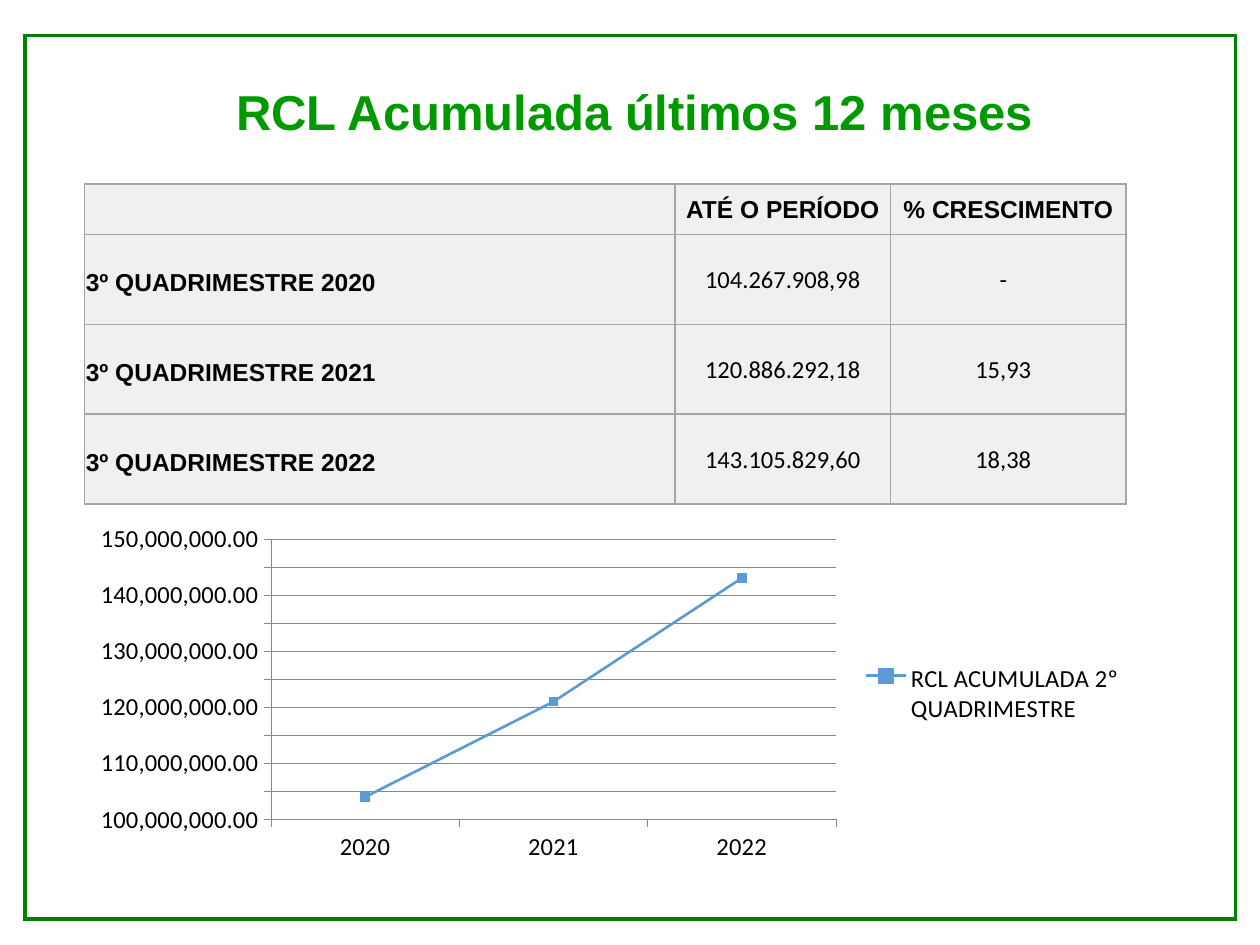
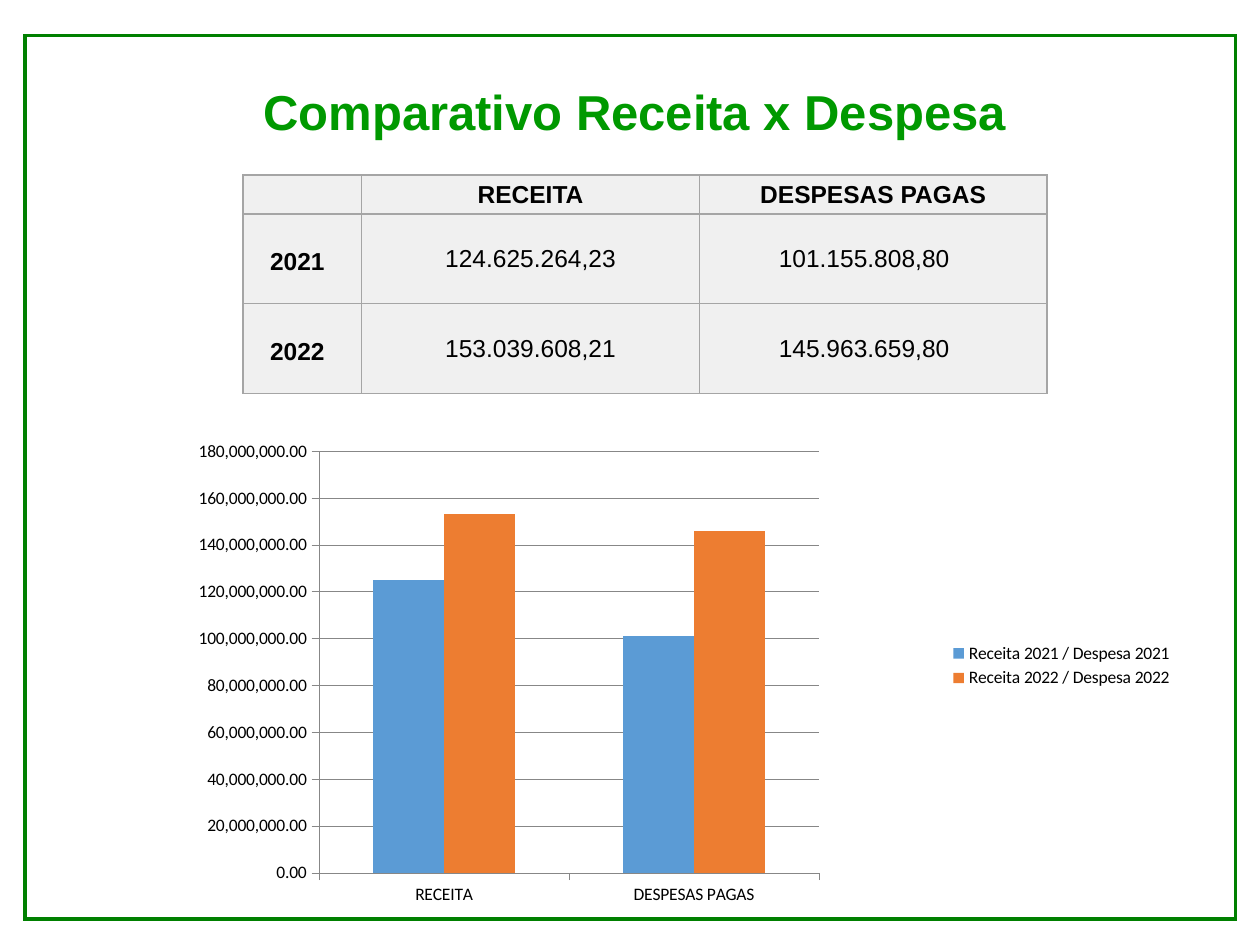
"""Build two slides on accumulated revenue and on revenue against expenses."""
from lxml import etree
from pptx import Presentation
from pptx.chart.data import CategoryChartData
from pptx.dml.color import RGBColor
from pptx.enum import chart as charts, shapes, text
from pptx.oxml import ns
from pptx.util import Cm, Pt

FRAME_GREEN = RGBColor(0x00, 0x80, 0x00)
TITLE_GREEN = RGBColor(0x00, 0x99, 0x00)
CELL_GREY = RGBColor(0xF0, 0xF0, 0xF0)
BORDER_GREY = RGBColor(0xA5, 0xA5, 0xA5)
AXIS_GREY = RGBColor(0x87, 0x87, 0x87)
BLACK = RGBColor(0x00, 0x00, 0x00)
SERIES_COLORS = [RGBColor(0x5B, 0x9B, 0xD5), RGBColor(0xED, 0x7D, 0x31)]

SLIDES = [
    {
        "title": "RCL Acumulada últimos 12 meses",
        "table_at": (1.7, 3.71),
        "columns": [11.91, 4.34, 4.75],
        "header_height": 1.02,
        "rows": [
            ["", "ATÉ O PERÍODO", "% CRESCIMENTO"],
            ["3º QUADRIMESTRE 2020", "104.267.908,98", "-"],
            ["3º QUADRIMESTRE 2021", "120.886.292,18", "15,93"],
            ["3º QUADRIMESTRE 2022", "143.105.829,60", "18,38"],
        ],
        "label_align": text.PP_ALIGN.LEFT,
        "number_font": "Calibri",
        "last_margin": 0.23,
        "chart_type": charts.XL_CHART_TYPE.LINE_MARKERS,
        "chart_at": (1.63, 10.44, 21.29, 7.09),
        "plot_percent": (18, 6, 53.5, 79.8),
        "scale": (100_000_000, 150_000_000, 5_000_000),
        "chart_size": 14,
        "categories": ["2020", "2021", "2022"],
        "series": {"RCL ACUMULADA 2º QUADRIMESTRE": [104_000_000, 121_000_000, 143_000_000]},
    },
    {
        "title": "Comparativo Receita x Despesa",
        "table_at": (4.9, 3.53),
        "columns": [2.39, 6.81, 7.01],
        "header_height": 0.78,
        "rows": [
            ["", "RECEITA", "DESPESAS PAGAS"],
            ["2021", "124.625.264,23", "101.155.808,80"],
            ["2022", "153.039.608,21", "145.963.659,80"],
        ],
        "label_align": text.PP_ALIGN.CENTER,
        "number_font": "Arial",
        "last_margin": 0.4,
        "chart_type": charts.XL_CHART_TYPE.COLUMN_CLUSTERED,
        "chart_at": (1.9, 8.53, 22, 9.78),
        "plot_percent": (20.6, 5.8, 45.8, 86.9),
        "scale": (0, 180_000_000, 20_000_000),
        "chart_size": 10,
        "categories": ["RECEITA", "DESPESAS PAGAS"],
        "series": {
            "Receita 2021 / Despesa 2021": [125_000_000, 101_000_000],
            "Receita 2022 / Despesa 2022": [153_000_000, 146_000_000],
        },
    },
]


def style_cell(cell, font_name, bold, align):
    """Give a table cell its fill, font and grey borders."""
    cell.fill.solid()
    cell.fill.fore_color.rgb = CELL_GREY
    cell.vertical_anchor = text.MSO_ANCHOR.MIDDLE
    paragraph = cell.text_frame.paragraphs[0]
    paragraph.alignment = align
    paragraph.font.name = font_name
    paragraph.font.size = Pt(14)
    paragraph.font.bold = bold
    paragraph.font.color.rgb = BLACK
    properties = cell._tc.get_or_add_tcPr()
    for position, side in enumerate(("lnL", "lnR", "lnT", "lnB")):
        border = etree.Element(ns.qn(f"a:{side}"), w=str(Pt(1)))
        fill = etree.SubElement(border, ns.qn("a:solidFill"))
        etree.SubElement(fill, ns.qn("a:srgbClr"), val=str(BORDER_GREY))
        properties.insert(position, border)


def place_plot(chart, percentages):
    """Fix the inner plot area as percentages of the chart."""
    plot_area = chart._chartSpace.chart.plotArea
    for old_layout in plot_area.findall(ns.qn("c:layout")):
        plot_area.remove(old_layout)
    layout = etree.Element(ns.qn("c:layout"))
    manual = etree.SubElement(layout, ns.qn("c:manualLayout"))
    settings = [("layoutTarget", "inner"), ("xMode", "edge"), ("yMode", "edge")]
    settings += [(name, percent / 100) for name, percent in zip("xywh", percentages)]
    for name, value in settings:
        etree.SubElement(manual, ns.qn(f"c:{name}"), val=str(value))
    plot_area.insert(0, layout)


presentation = Presentation()
presentation.slide_width = Cm(25.4)
presentation.slide_height = Cm(19.05)

for content in SLIDES:
    slide = presentation.slides.add_slide(presentation.slide_layouts[6])

    frame = slide.shapes.add_shape(
        shapes.MSO_SHAPE.RECTANGLE, Cm(0.5), Cm(0.72), Cm(24.41), Cm(17.81))
    frame.shadow.inherit = False
    frame.fill.background()
    frame.line.color.rgb = FRAME_GREEN
    frame.line.width = Pt(2)
    etree.SubElement(frame.line._ln, ns.qn("a:miter"), lim="800000")

    title = slide.shapes.add_textbox(Cm(2.7), Cm(1.52), Cm(20.19), Cm(1.45))
    title.text_frame.word_wrap = True
    paragraph = title.text_frame.paragraphs[0]
    paragraph.text = content["title"]
    paragraph.alignment = text.PP_ALIGN.CENTER
    paragraph.font.name = "Arial"
    paragraph.font.size = Pt(28)
    paragraph.font.bold = True
    paragraph.font.color.rgb = TITLE_GREEN

    rows, columns = content["rows"], content["columns"]
    heights = [content["header_height"]] + [1.81] * (len(rows) - 1)
    left, top = content["table_at"]
    table = slide.shapes.add_table(
        len(rows), len(columns), Cm(left), Cm(top), Cm(sum(columns)), Cm(sum(heights))).table
    table.first_row = False
    table.horz_banding = False
    for column, width in zip(table.columns, columns):
        column.width = Cm(width)
    for row_index, (values, height) in enumerate(zip(rows, heights)):
        table.rows[row_index].height = Cm(height)
        for column_index, value in enumerate(values):
            cell = table.cell(row_index, column_index)
            is_header = row_index == 0
            is_label = column_index == 0 and not is_header
            cell.text = value
            cell.margin_left = Cm(0.03)
            cell.margin_right = Cm(
                0.03 if is_header or column_index == 1
                else 0.23 if is_label else content["last_margin"])
            cell.margin_top = Cm(0.15 if is_label else 0.03)
            cell.margin_bottom = Cm(0)
            style_cell(
                cell,
                "Arial" if is_header or is_label else content["number_font"],
                is_header or is_label,
                content["label_align"] if is_label else text.PP_ALIGN.CENTER)

    chart_data = CategoryChartData(number_format="#,##0.00")
    chart_data.categories = content["categories"]
    for name, values in content["series"].items():
        chart_data.add_series(name, values)
    chart = slide.shapes.add_chart(
        content["chart_type"], *map(Cm, content["chart_at"]), chart_data).chart
    chart.has_title = False
    chart.font.name = "Calibri"
    chart.font.size = Pt(content["chart_size"])
    chart.font.color.rgb = BLACK
    chart.has_legend = True
    chart.legend.position = charts.XL_LEGEND_POSITION.RIGHT
    chart.legend.include_in_layout = False
    place_plot(chart, content["plot_percent"])

    value_axis = chart.value_axis
    value_axis.minimum_scale, value_axis.maximum_scale, value_axis.major_unit = content["scale"]
    value_axis.tick_labels.number_format = "#,##0.00"
    value_axis.tick_labels.number_format_is_linked = False
    value_axis.has_major_gridlines = True
    for axis in (value_axis, chart.category_axis):
        axis.major_tick_mark = charts.XL_TICK_MARK.OUTSIDE
    for ruled in (value_axis, chart.category_axis, value_axis.major_gridlines):
        ruled.format.line.color.rgb = AXIS_GREY
        ruled.format.line.width = Pt(0.25)

    plot = chart.plots[0]
    plot.vary_by_categories = False
    for series, color in zip(plot.series, SERIES_COLORS):
        if content["chart_type"] == charts.XL_CHART_TYPE.LINE_MARKERS:
            series.smooth = False
            series.format.line.color.rgb = color
            series.format.line.width = Pt(1.5)
            series.marker.style = charts.XL_MARKER_STYLE.SQUARE
            series.marker.size = 5
            series.marker.format.fill.solid()
            series.marker.format.fill.fore_color.rgb = color
            series.marker.format.line.color.rgb = color
        else:
            plot.gap_width = 150
            plot.overlap = 0
            series.format.fill.solid()
            series.format.fill.fore_color.rgb = color

presentation.save("out.pptx")
